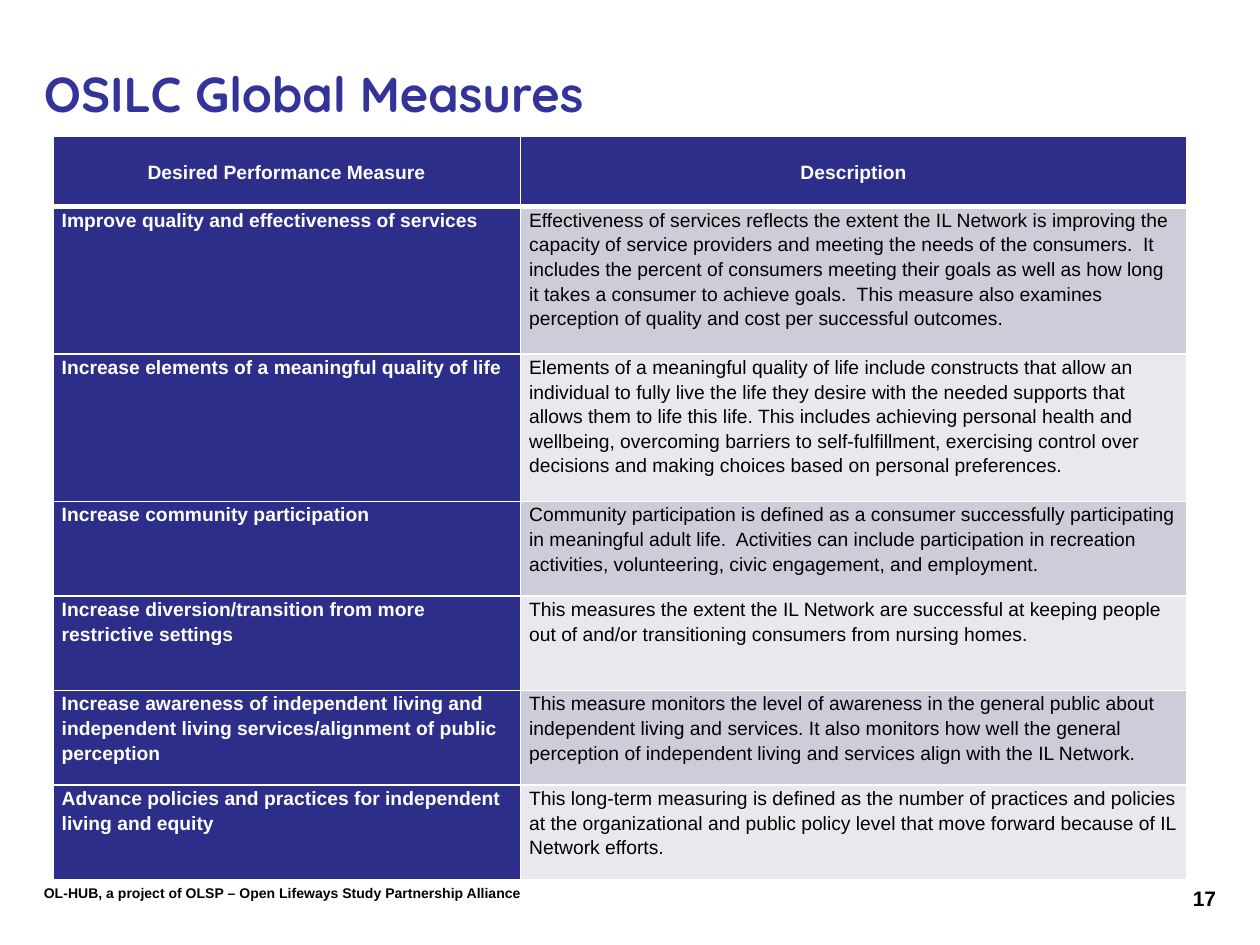
from dataclasses import dataclass
from typing import NamedTuple

from lxml import etree
from pptx import Presentation
from pptx.dml.color import RGBColor
from pptx.enum import text as t
from pptx.oxml import ns
from pptx.util import Inches, Pt


@dataclass(frozen=True)
class Theme:
    head: str = "Quicksand"
    body: str = "Arial"
    title: str = "333399"
    navy: str = "2D2D8A"
    bands: tuple = ("CDCDDA", "E8E8ED")
    white: str = "FFFFFF"
    black: str = "000000"
    big: int = 28
    page: int = 12
    cell: int = 11
    foot: int = 8


class Label(NamedTuple):
    words: str
    box: tuple
    face: str
    size: int
    color: str
    align: t.PP_ALIGN = t.PP_ALIGN.LEFT
    anchor: t.MSO_ANCHOR = t.MSO_ANCHOR.TOP


class Measure(NamedTuple):
    name: str
    about: str
    height: float


LOOK = Theme()

LABELS = [
    Label("OL-HUB, a project of OLSP – Open Lifeways Study Partnership Alliance",
          (0.25, 6.97, 5, 0.23), LOOK.body, LOOK.foot, LOOK.black),
    Label("OSILC Global Measures", (0.25, 0.3, 8.42, 0.87),
          LOOK.head, LOOK.big, LOOK.title, anchor=t.MSO_ANCHOR.MIDDLE),
    Label("17", (7.17, 6.98, 2.58, 0.27), LOOK.body, LOOK.page, LOOK.black,
          align=t.PP_ALIGN.RIGHT),
]

COLS = (3.71, 5.29)
HEADER = Measure("Desired Performance Measure", "Description", 0.56)
MEASURES = [
    Measure("Improve quality and effectiveness of services",
            "Effectiveness of services reflects the extent the IL Network is "
            "improving the capacity of service providers and meeting the needs "
            "of the consumers.  It includes the percent of consumers meeting "
            "their goals as well as how long it takes a consumer to achieve "
            "goals.  This measure also examines perception of quality and cost "
            "per successful outcomes.", 1.17),
    Measure("Increase elements of a meaningful quality of life",
            "Elements of a meaningful quality of life include constructs that "
            "allow an individual to fully live the life they desire with the "
            "needed supports that allows them to life this life. This includes "
            "achieving personal health and wellbeing, overcoming barriers to "
            "self-fulfillment, exercising control over decisions and making "
            "choices based on personal preferences.", 1.17),
    Measure("Increase community participation",
            "Community participation is defined as a consumer successfully "
            "participating in meaningful adult life.  Activities can include "
            "participation in recreation activities, volunteering, civic "
            "engagement, and employment.", 0.75),
    Measure("Increase diversion/transition from more restrictive settings",
            "This measures the extent the IL Network are successful at keeping "
            "people out of and/or transitioning consumers from nursing homes.",
            0.75),
    Measure("Increase awareness of independent living and independent living "
            "services/alignment of public perception",
            "This measure monitors the level of awareness in the general public "
            "about independent living and services. It also monitors how well "
            "the general perception of independent living and services align "
            "with the IL Network.", 0.75),
    Measure("Advance policies and practices for independent living and equity",
            "This long-term measuring is defined as the number of practices and "
            "policies at the organizational and public policy level that move "
            "forward because of IL Network efforts.", 0.75),
]


def style(para, face: str, size: int, color: str, bold: bool) -> None:
    font = para.font
    font.name, font.size, font.bold = face, Pt(size), bold
    font.color.rgb = RGBColor.from_string(color)


def write(slide, label: Label) -> None:
    frame = slide.shapes.add_textbox(*map(Inches, label.box)).text_frame
    frame.word_wrap = True
    frame.vertical_anchor = label.anchor
    para = frame.paragraphs[0]
    para.text = label.words
    para.alignment = label.align
    style(para, label.face, label.size, label.color, True)


def border(cell, top: float, bottom: float) -> None:
    """Draw white cell edges; call before the fill, which must follow them."""
    props = cell._tc.get_or_add_tcPr()
    for side, width in (("L", 1), ("R", 1), ("T", top), ("B", bottom)):
        line = etree.SubElement(props, ns.qn(f"a:ln{side}"), w=str(Pt(width)))
        fill = etree.SubElement(line, ns.qn("a:solidFill"))
        etree.SubElement(fill, ns.qn("a:srgbClr"), val=LOOK.white)


def fill_cell(cell, words: str, row: int, col: int) -> None:
    strong = row == 0 or col == 0
    border(cell, 3 if row == 1 else 1, 3 if row == 0 else 1)
    cell.fill.solid()
    back = LOOK.navy if strong else LOOK.bands[(row - 1) % 2]
    cell.fill.fore_color.rgb = RGBColor.from_string(back)
    cell.margin_left = cell.margin_right = Inches(0.07)
    cell.margin_top = cell.margin_bottom = 0
    cell.vertical_anchor = t.MSO_ANCHOR.TOP if row else t.MSO_ANCHOR.MIDDLE
    para = cell.text_frame.paragraphs[0]
    para.text = words
    para.line_spacing = 1.15
    para.alignment = t.PP_ALIGN.LEFT if row else t.PP_ALIGN.CENTER
    style(para, LOOK.body, LOOK.cell, LOOK.white if strong else LOOK.black, strong)


def add_grid(slide) -> None:
    rows = [HEADER, *MEASURES]
    high = sum(item.height for item in rows)
    grid = slide.shapes.add_table(
        len(rows), len(COLS), Inches(0.42), Inches(1.08),
        Inches(sum(COLS)), Inches(high)).table
    for col, width in enumerate(COLS):
        grid.columns[col].width = Inches(width)
    for row, item in enumerate(rows):
        grid.rows[row].height = Inches(item.height)
        for col, words in enumerate((item.name, item.about)):
            fill_cell(grid.cell(row, col), words, row, col)


def main() -> None:
    deck = Presentation()
    deck.slide_width, deck.slide_height = Inches(10), Inches(7.5)
    slide = deck.slides.add_slide(deck.slide_layouts[6])
    for label in LABELS:
        write(slide, label)
    add_grid(slide)
    deck.save("out.pptx")


if __name__ == "__main__":
    main()
